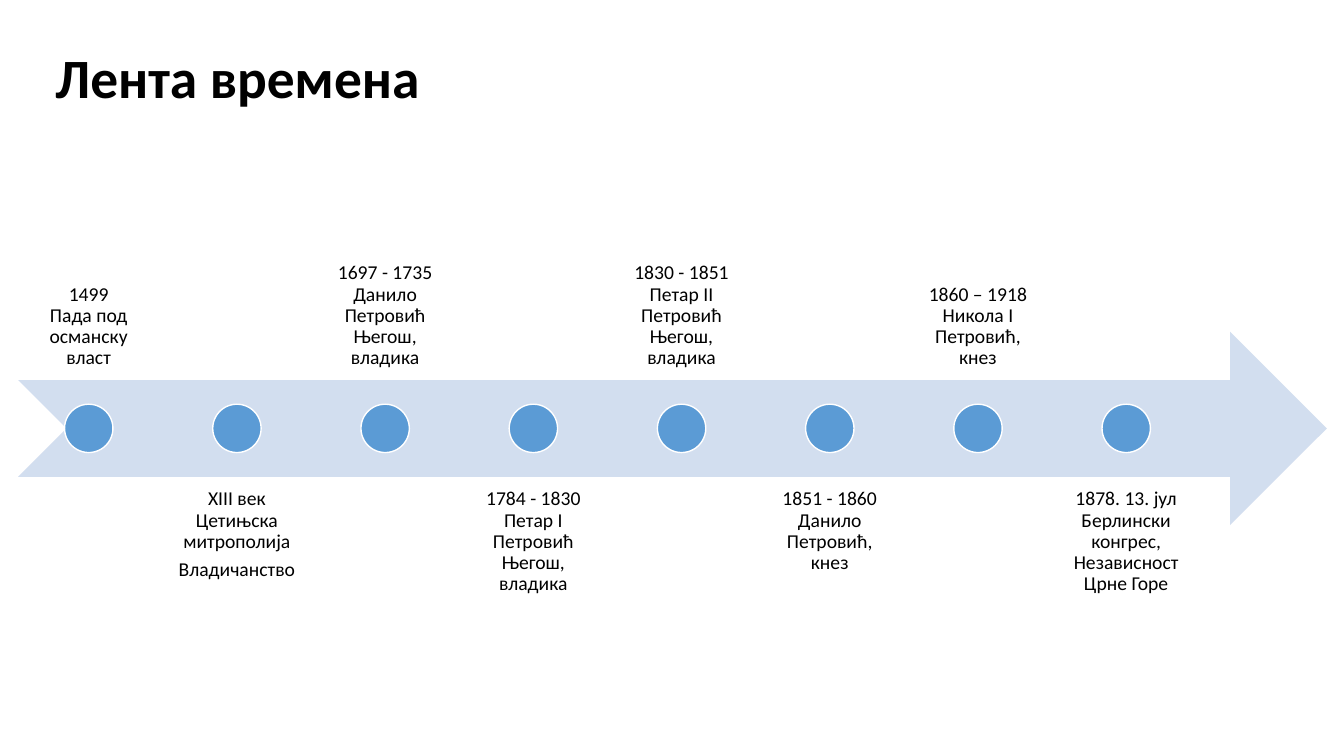
import pptx
import pptx.dml.color
import pptx.enum.shapes
import pptx.enum.text
import pptx.util
from dataclasses import dataclass

Inches = pptx.util.Inches
Pt = pptx.util.Pt
Anchor = pptx.enum.text.MSO_ANCHOR
Align = pptx.enum.text.PP_ALIGN
Shape = pptx.enum.shapes.MSO_SHAPE


@dataclass(frozen=True)
class Theme:
    font: str = "Calibri"
    text: str = "000000"
    arrow: str = "D2DEEF"
    dot: str = "5B9BD5"
    dot_line: str = "FFFFFF"
    title_size: float = 39.6
    label_size: float = 14
    line_spacing: float = 0.9
    space_after: float = 5


# Each "\v" is a line break, each "\n" a new paragraph
EVENTS = [
    "1499\vПада под османску власт",
    "XIII век Цетињска митрополија\nВладичанство",
    "1697 - 1735 Данило Петровић Његош, владика",
    "1784 - 1830 Петар I Петровић Његош, владика",
    "1830 - 1851 Петар II Петровић Његош, владика",
    "1851 - 1860 Данило Петровић, кнез",
    "1860 – 1918 Никола I Петровић, кнез",
    "1878. 13. јул\vБерлински конгрес, Независност Црне Горе",
]

# Timeline geometry in inches
LEFT, ARROW_TOP, ARROW_WIDTH, ARROW_HEIGHT = 0.18, 3.29, 12.98, 1.92
STEP, LABEL_WIDTH, DOT = 1.47, 1.4, 0.48
LABEL_TOP_ABOVE, LABEL_TOP_BELOW = 1.85, 4.74
DOT_TOP = ARROW_TOP + (ARROW_HEIGHT - DOT) / 2


class TimelineSlide:
    def __init__(self, presentation, theme):
        self.theme = theme
        layout = presentation.slide_layouts.get_by_name("Title Only")
        self.slide = presentation.slides.add_slide(layout)

    def color(self, value):
        return pptx.dml.color.RGBColor.from_string(value)

    def format_text(self, text_frame, size, alignment, bold=False, space_after=0):
        for paragraph in text_frame.paragraphs:
            paragraph.alignment = alignment
            paragraph.line_spacing = self.theme.line_spacing
            paragraph.space_before = Pt(0)
            paragraph.space_after = Pt(space_after)
            for run in paragraph.runs:
                run.font.name = self.theme.font
                run.font.size = Pt(size)
                run.font.bold = bold
                run.font.color.rgb = self.color(self.theme.text)

    def title(self, text, left, top, width, height):
        title = self.slide.shapes.title
        title.left, title.top = Inches(left), Inches(top)
        title.width, title.height = Inches(width), Inches(height)
        text_frame = title.text_frame
        text_frame.text = text
        text_frame.auto_size = pptx.enum.text.MSO_AUTO_SIZE.NONE
        text_frame.vertical_anchor = Anchor.MIDDLE
        self.format_text(text_frame, self.theme.title_size, Align.LEFT, bold=True)

    def shape(self, kind, left, top, width, height, fill, line=None):
        shape = self.slide.shapes.add_shape(
            kind, Inches(left), Inches(top), Inches(width), Inches(height))
        shape.shadow.inherit = False
        shape.fill.solid()
        shape.fill.fore_color.rgb = self.color(fill)
        if line:
            shape.line.color.rgb = self.color(line)
            shape.line.width = Pt(1)
        else:
            shape.line.fill.background()

    def label(self, text, left, top, width, height, anchor):
        box = self.slide.shapes.add_textbox(
            Inches(left), Inches(top), Inches(width), Inches(height))
        text_frame = box.text_frame
        text_frame.word_wrap = True
        text_frame.vertical_anchor = anchor
        text_frame.margin_left = text_frame.margin_right = Inches(0.11)
        text_frame.margin_top = text_frame.margin_bottom = Inches(0.11)
        text_frame.text = text
        self.format_text(text_frame, self.theme.label_size, Align.CENTER,
                         space_after=self.theme.space_after)


def main():
    presentation = pptx.Presentation()
    presentation.slide_width = Inches(13.33)
    presentation.slide_height = Inches(7.5)
    theme = Theme()
    timeline = TimelineSlide(presentation, theme)

    # Title and arrow
    timeline.title("Лента времена", 0.45, 0.45, 3.99, 0.69)
    timeline.shape(Shape.NOTCHED_RIGHT_ARROW, LEFT, ARROW_TOP,
                   ARROW_WIDTH, ARROW_HEIGHT, theme.arrow)

    # Events, alternating above and below the arrow
    for index, event in enumerate(EVENTS):
        left = LEFT + index * STEP
        if index % 2 == 0:
            top, anchor = LABEL_TOP_ABOVE, Anchor.BOTTOM
        else:
            top, anchor = LABEL_TOP_BELOW, Anchor.TOP
        timeline.label(event, left, top, LABEL_WIDTH, ARROW_HEIGHT, anchor)
        timeline.shape(Shape.OVAL, left + (LABEL_WIDTH - DOT) / 2, DOT_TOP,
                       DOT, DOT, theme.dot, theme.dot_line)

    presentation.save("out.pptx")


if __name__ == "__main__":
    main()
